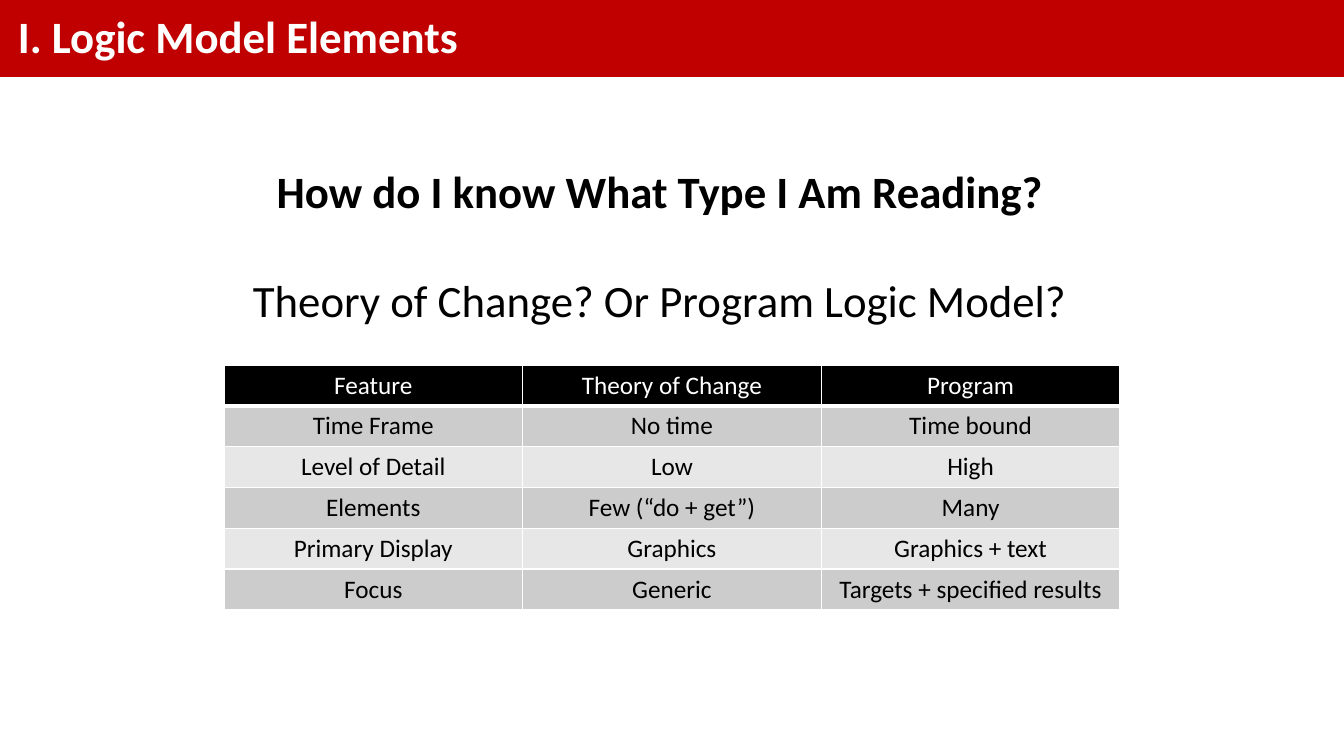
import dataclasses

import pptx
import pptx.dml.color
import pptx.enum.shapes
import pptx.enum.text
import pptx.oxml
import pptx.oxml.ns
import pptx.slide
import pptx.table
import pptx.text.text
import pptx.util

EMU_PER_PX = 914400 / 100.8
FONT = "Calibri"
RED, BLACK, WHITE = "C00000", "000000", "FFFFFF"
BANDS = ("CCCCCC", "E7E7E7")

COMPARISON = (
    ("Feature", "Theory of Change", "Program"),
    ("Time Frame", "No time", "Time bound"),
    ("Level of Detail", "Low", "High"),
    ("Elements", "Few (“do + get”)", "Many"),
    ("Primary Display", "Graphics", "Graphics + text"),
    ("Focus", "Generic", "Targets + specified results"),
)


@dataclasses.dataclass(frozen=True)
class Box:
    left: int
    top: int
    width: int
    height: int

    def emu(self) -> tuple[pptx.util.Emu, ...]:
        return tuple(px(length) for length in dataclasses.astuple(self))


@dataclasses.dataclass(frozen=True)
class RowStyle:
    fill: str
    color: str
    bottom_pt: int


def px(length: int) -> pptx.util.Emu:
    return pptx.util.Emu(round(length * EMU_PER_PX))


def rgb(value: str) -> pptx.dml.color.RGBColor:
    return pptx.dml.color.RGBColor.from_string(value)


def write(paragraph: pptx.text.text._Paragraph, text: str, *, size: int = 32,
          color: str = BLACK, bold: bool = False, centered: bool = True,
          line_spacing: float | None = None, before: int | None = None) -> None:
    align = pptx.enum.text.PP_ALIGN
    paragraph.alignment = align.CENTER if centered else align.LEFT
    if line_spacing is not None:
        paragraph.line_spacing = line_spacing
    if before is not None:
        paragraph.space_before = pptx.util.Pt(before)
    run = paragraph.add_run()
    run.text = text
    run.font.name = FONT
    run.font.size = pptx.util.Pt(size)
    run.font.bold = bold
    run.font.color.rgb = rgb(color)


def add_text_frame(slide: pptx.slide.Slide, box: Box) -> pptx.text.text.TextFrame:
    frame = slide.shapes.add_textbox(*box.emu()).text_frame
    frame.word_wrap = True
    return frame


def add_banner(slide: pptx.slide.Slide, box: Box) -> None:
    banner = slide.shapes.add_shape(
        pptx.enum.shapes.MSO_SHAPE.RECTANGLE, *box.emu())
    banner.shadow.inherit = False
    banner.fill.solid()
    banner.fill.fore_color.rgb = rgb(RED)
    banner.line.fill.background()


def set_borders(cell: pptx.table._Cell, bottom_pt: int) -> None:
    """Draw white edges, 1 pt wide except for the bottom one."""
    properties = cell._tc.get_or_add_tcPr()
    for edge, width in (("L", 1), ("R", 1), ("T", 1), ("B", bottom_pt)):
        properties.append(pptx.oxml.parse_xml(
            f'<a:ln{edge} {pptx.oxml.ns.nsdecls("a")} w="{pptx.util.Pt(width)}">'
            f'<a:solidFill><a:srgbClr val="{WHITE}"/></a:solidFill></a:ln{edge}>'))


def row_style(index: int) -> RowStyle:
    if index == 0:
        return RowStyle(BLACK, WHITE, 3)
    return RowStyle(BANDS[(index - 1) % len(BANDS)], BLACK, 1)


def add_comparison(slide: pptx.slide.Slide, box: Box) -> None:
    table = slide.shapes.add_table(
        len(COMPARISON), len(COMPARISON[0]), *box.emu()).table
    for row_index, labels in enumerate(COMPARISON):
        style = row_style(row_index)
        for column_index, label in enumerate(labels):
            cell = table.cell(row_index, column_index)
            set_borders(cell, style.bottom_pt)
            cell.fill.solid()
            cell.fill.fore_color.rgb = rgb(style.fill)
            write(cell.text_frame.paragraphs[0], label, size=18, color=style.color)


def main() -> None:
    presentation = pptx.Presentation()
    presentation.slide_width = px(1344)
    presentation.slide_height = px(756)
    slide = presentation.slides.add_slide(presentation.slide_layouts[6])

    add_banner(slide, Box(0, 0, 1344, 77))
    title = add_text_frame(slide, Box(8, 17, 1309, 45))
    title.vertical_anchor = pptx.enum.text.MSO_ANCHOR.MIDDLE
    write(title.paragraphs[0], "I. Logic Model Elements",
          color=WHITE, bold=True, centered=False, line_spacing=0.9)

    question = add_text_frame(slide, Box(72, 159, 1176, 173))
    write(question.paragraphs[0], "How do I know What Type I Am Reading?", bold=True)
    write(question.add_paragraph(), "Theory of Change? Or Program Logic Model?",
          before=39)

    add_comparison(slide, Box(224, 365, 896, 245))
    presentation.save("out.pptx")


if __name__ == "__main__":
    main()
